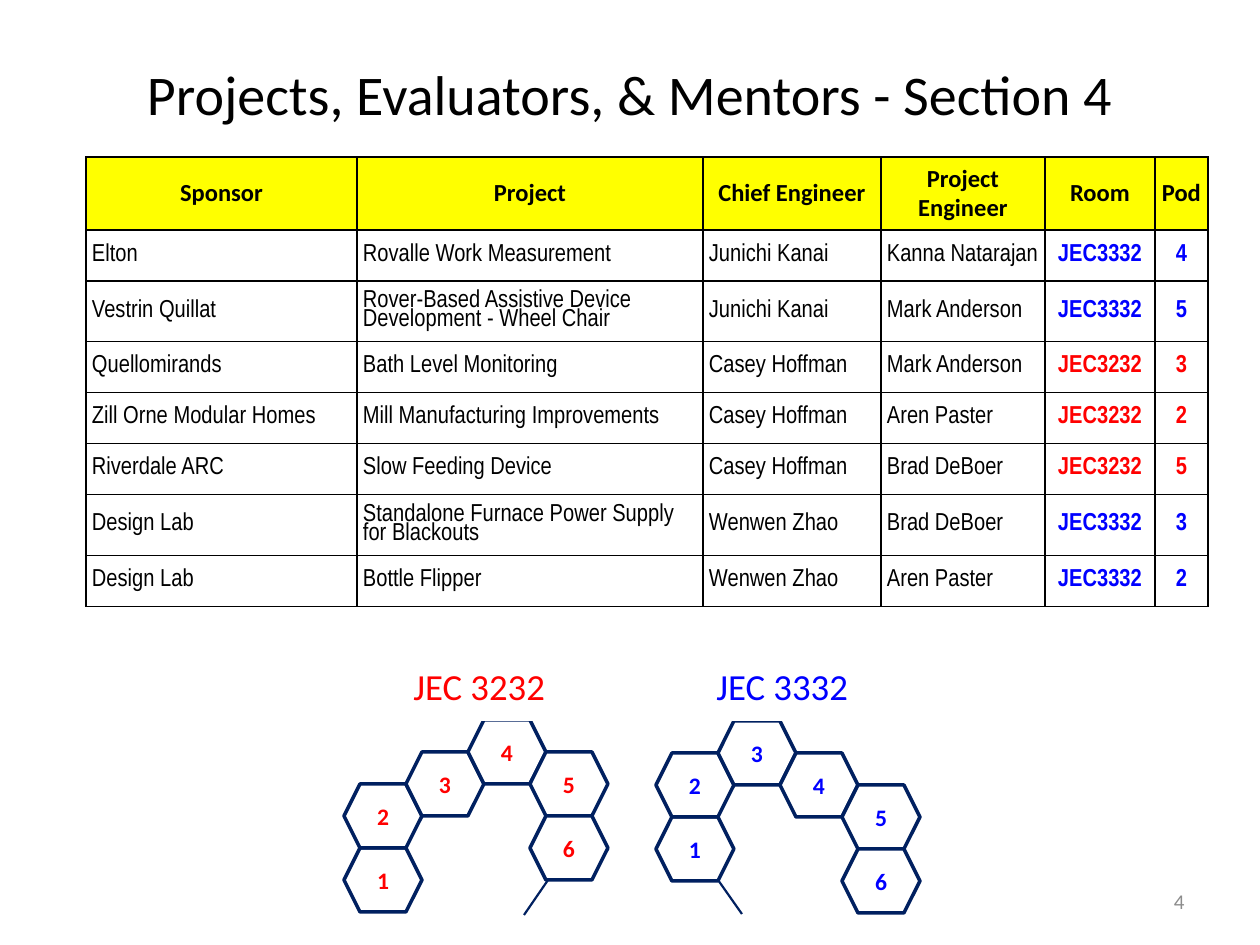
from lxml import etree
from pptx import Presentation
from pptx.dml.color import RGBColor
from pptx.enum.shapes import MSO_CONNECTOR, MSO_SHAPE
from pptx.enum.text import MSO_ANCHOR, PP_ALIGN
from pptx.oxml.ns import qn
from pptx.util import Pt

LEFT, CENTER, RIGHT = PP_ALIGN.LEFT, PP_ALIGN.CENTER, PP_ALIGN.RIGHT
TOP, MIDDLE = MSO_ANCHOR.TOP, MSO_ANCHOR.MIDDLE
HEXAGON, RECTANGLE = MSO_SHAPE.HEXAGON, MSO_SHAPE.RECTANGLE
STRAIGHT = MSO_CONNECTOR.STRAIGHT

COLORS = {
    "black": "000000", "white": "FFFFFF", "yellow": "FFFF00", "gray": "8C8C8C",
    "navy": "002060", "red": "FF0000", "blue": "0000FF",
}
BODY, NARROW = "Calibri", "Arial Narrow"

TITLE = "Projects, Evaluators, & Mentors - Section 4"
PAGE_NUMBER = "4"
ROOM_COLORS = {"JEC3232": "red", "JEC3332": "blue"}

HEADERS = ["Sponsor", "Project", "Chief Engineer", "Project Engineer", "Room", "Pod"]
PROJECTS = [
    ("Elton", "Rovalle Work Measurement", "Junichi Kanai", "Kanna Natarajan", "JEC3332", "4"),
    ("Vestrin Quillat", "Rover-Based Assistive Device Development - Wheel Chair",
     "Junichi Kanai", "Mark Anderson", "JEC3332", "5"),
    ("Quellomirands", "Bath Level Monitoring", "Casey Hoffman", "Mark Anderson", "JEC3232", "3"),
    ("Zill Orne Modular Homes", "Mill Manufacturing Improvements",
     "Casey Hoffman", "Aren Paster", "JEC3232", "2"),
    ("Riverdale ARC", "Slow Feeding Device", "Casey Hoffman", "Brad DeBoer", "JEC3232", "5"),
    ("Design Lab", "Standalone Furnace Power Supply for Blackouts",
     "Wenwen Zhao", "Brad DeBoer", "JEC3332", "3"),
    ("Design Lab", "Bottle Flipper", "Wenwen Zhao", "Aren Paster", "JEC3332", "2"),
]
TABLE_LEFT, TABLE_TOP = 86, 157
COLUMN_WIDTHS = [271, 346, 178, 164, 110, 53]
ROW_HEIGHTS = [73, 51, 59, 51, 51, 51, 59, 51]

# Pods 1 to 6 are placed by (column, half row) from the room's origin.
ROOMS = [
    {"label": "JEC 3332", "label_left": 704, "color": "blue", "origin": (656, 721),
     "pods": [(0, 3), (0, 1), (1, 0), (2, 1), (3, 2), (3, 4)],
     "door": (673, 816, 742, 914)},
    {"label": "JEC 3232", "label_left": 401, "color": "red", "origin": (344, 720),
     "pods": [(0, 4), (0, 2), (1, 1), (2, 0), (3, 1), (3, 3)],
     "door": (592, 816, 524, 915)},
]
POD_WIDTH, POD_HEIGHT, POD_STEP = 78, 64, 62
LABEL_TOP, LABEL_WIDTH, LABEL_HEIGHT = 658, 159, 63


def px(length):
    return round(length * 914400 / 126)


def rgb(name):
    return RGBColor.from_string(COLORS[name])


def write(frame, text, size, color, align=LEFT, font=BODY, bold=False):
    para = frame.paragraphs[0]
    para.alignment = align
    span = para.add_run()
    span.text = text
    span.font.size = Pt(size)
    span.font.name = font
    span.font.bold = bold
    span.font.color.rgb = rgb(color)
    return para


def add_text(page, bounds, text, size, color, align):
    box = page.shapes.add_textbox(*map(px, bounds))
    box.text_frame.word_wrap = True
    box.text_frame.vertical_anchor = MIDDLE
    write(box.text_frame, text, size, color, align)


def add_white_shape(page, kind, bounds):
    shape = page.shapes.add_shape(kind, *map(px, bounds))
    shape.shadow.inherit = False
    shape.fill.solid()
    shape.fill.fore_color.rgb = rgb("white")
    return shape


def style_cell(cell, fill):
    cell.vertical_anchor = MIDDLE
    cell.margin_left = cell.margin_right = cell.margin_top = cell.margin_bottom = px(6)
    properties = cell._tc.get_or_add_tcPr()
    for side in ("a:lnL", "a:lnR", "a:lnT", "a:lnB"):
        border = etree.SubElement(properties, qn(side), w=str(Pt(1)))
        solid = etree.SubElement(border, qn("a:solidFill"))
        etree.SubElement(solid, qn("a:srgbClr"), val=COLORS["black"])
    cell.fill.solid()
    cell.fill.fore_color.rgb = rgb(fill)


def add_projects(page):
    frame = page.shapes.add_table(
        len(ROW_HEIGHTS), len(COLUMN_WIDTHS), px(TABLE_LEFT), px(TABLE_TOP),
        px(sum(COLUMN_WIDTHS)), px(sum(ROW_HEIGHTS)))
    table = frame.table
    table.first_row = table.horz_banding = False
    for column, width in zip(table.columns, COLUMN_WIDTHS):
        column.width = px(width)
    for row, height in zip(table.rows, ROW_HEIGHTS):
        row.height = px(height)

    for index, header in enumerate(HEADERS):
        cell = table.cell(0, index)
        style_cell(cell, "yellow")
        write(cell.text_frame, header, 14, "black", CENTER, bold=True)
    for row_index, project in enumerate(PROJECTS, 1):
        room_color = ROOM_COLORS[project[4]]
        for index, text in enumerate(project):
            cell = table.cell(row_index, index)
            style_cell(cell, "white")
            if index >= 4:
                para = write(cell.text_frame, text, 14, room_color, CENTER, NARROW, True)
            else:
                para = write(cell.text_frame, text, 14, "black", LEFT, NARROW)
            para.line_spacing = 0.83


def add_room(page, room):
    door = page.shapes.add_connector(STRAIGHT, *map(px, room["door"]))
    door.line.color.rgb = rgb("navy")
    door.line.width = Pt(1.25)
    etree.SubElement(door._element.spPr, qn("a:effectLst"))

    left, top = room["origin"]
    for number, (column, half_row) in enumerate(room["pods"], 1):
        pod = add_white_shape(page, HEXAGON, (
            left + column * POD_STEP, top + half_row * POD_HEIGHT // 2, POD_WIDTH, POD_HEIGHT))
        pod.line.color.rgb = rgb("navy")
        pod.line.width = Pt(2)
        frame = pod.text_frame
        frame.margin_left = frame.margin_right = frame.margin_top = frame.margin_bottom = 0
        frame.vertical_anchor = MIDDLE
        write(frame, str(number), 13.5, room["color"], CENTER, bold=True)

    label = add_white_shape(
        page, RECTANGLE, (room["label_left"], LABEL_TOP, LABEL_WIDTH, LABEL_HEIGHT))
    label.line.fill.background()
    label.text_frame.word_wrap = False
    label.text_frame.vertical_anchor = TOP
    write(label.text_frame, room["label"], 21, room["color"])


def main():
    deck = Presentation()
    deck.slide_width, deck.slide_height = px(1260), px(945)
    page = deck.slides.add_slide(deck.slide_layouts[6])
    add_text(page, (63, 38, 1134, 110), TITLE, 32, "black", CENTER)
    add_projects(page)
    add_text(page, (903, 876, 294, 50), PAGE_NUMBER, 12, "gray", RIGHT)
    for room in ROOMS:
        add_room(page, room)
    deck.save("out.pptx")


if __name__ == "__main__":
    main()
